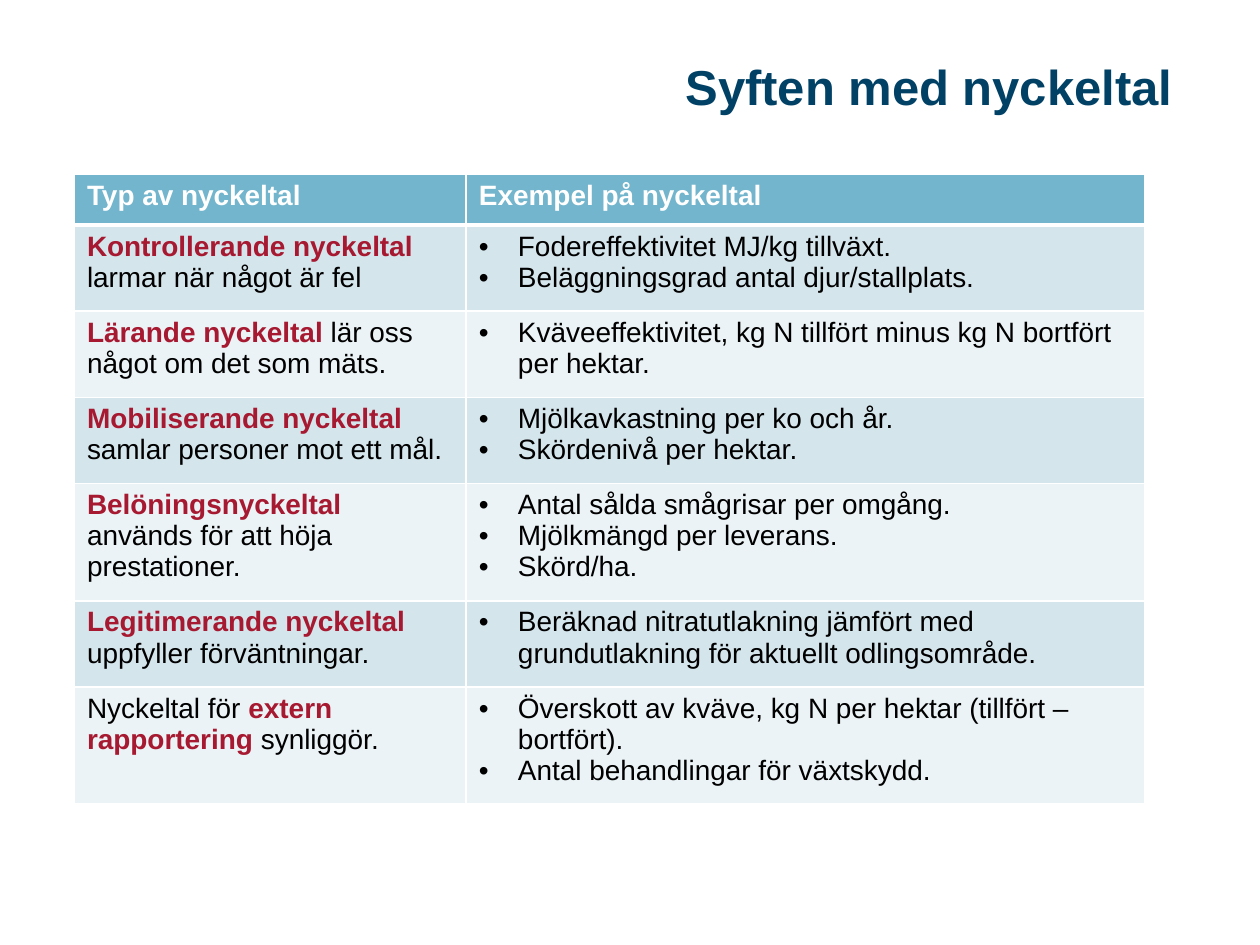
from lxml import etree
from pptx import Presentation
from pptx.dml.color import RGBColor
from pptx.enum.text import MSO_ANCHOR, PP_ALIGN
from pptx.oxml.ns import qn
from pptx.util import Pt

RIGHT = PP_ALIGN.RIGHT
MIDDLE = MSO_ANCHOR.MIDDLE
TITLE_ONLY = 5
EMU_PER_PX = 914400 // 126

COLORS = {
    "title": "004165",
    "header": "72B5CC",
    "odd_row": "D5E5EC",
    "even_row": "EBF3F6",
    "key": "A71930",
    "body": "000000",
    "white": "FFFFFF",
}

HEADINGS = ["Typ av nyckeltal", "Exempel på nyckeltal"]

# Each purpose: runs of (text, colour of the run), then its examples
PURPOSES = [
    ([("Kontrollerande nyckeltal ", "key"), ("larmar när något är fel", "body")],
     ["Fodereffektivitet MJ/kg tillväxt.",
      "Beläggningsgrad antal djur/stallplats."]),
    ([("Lärande nyckeltal ", "key"), ("lär oss något om det som mäts.", "body")],
     ["Kväveeffektivitet, kg N tillfört minus kg N bortfört per hektar."]),
    ([("Mobiliserande nyckeltal ", "key"), ("samlar personer mot ett mål.", "body")],
     ["Mjölkavkastning per ko och år.",
      "Skördenivå per hektar."]),
    ([("Belöningsnyckeltal", "key"), (" används för att höja prestationer.", "body")],
     ["Antal sålda smågrisar per omgång.",
      "Mjölkmängd per leverans.",
      "Skörd/ha."]),
    ([("Legitimerande nyckeltal ", "key"), ("uppfyller förväntningar.", "body")],
     ["Beräknad nitratutlakning jämfört med grundutlakning för aktuellt odlingsområde."]),
    ([("Nyckeltal för ", "body"), ("extern rapportering ", "key"), ("synliggör.", "body")],
     ["Överskott av kväve, kg N per hektar (tillfört – bortfört).",
      "Antal behandlingar för växtskydd."]),
]


def px(length):
    return length * EMU_PER_PX


class SlideBuilder:
    FONT = "Arial"
    TITLE_SIZE = 28
    TABLE_SIZE = 16
    BULLET_INDENT = 39

    def __init__(self, slide):
        self.slide = slide

    def run(self, paragraph, text, size, color, bold=False):
        run = paragraph.add_run()
        run.text = text
        run.font.name = self.FONT
        run.font.size = Pt(size)
        run.font.bold = bold
        run.font.color.rgb = RGBColor.from_string(COLORS[color])

    def title(self, text, left, top, width, height):
        title = self.slide.shapes.title
        title.left, title.top = px(left), px(top)
        title.width, title.height = px(width), px(height)
        title.text_frame.vertical_anchor = MIDDLE
        paragraph = title.text_frame.paragraphs[0]
        paragraph.alignment = RIGHT
        self.run(paragraph, text, self.TITLE_SIZE, "title", bold=True)

    def table(self, left, top, column_widths, row_count, row_height):
        """Add a table whose rows grow from row_height to fit their text."""
        frame = self.slide.shapes.add_table(
            row_count, len(column_widths), px(left), px(top),
            px(sum(column_widths)), px(row_count * row_height))
        for column, width in zip(frame.table.columns, column_widths):
            column.width = px(width)
        return frame.table

    def cell(self, cell, paragraphs, fill, top_line=1, bottom_line=1,
             bottom_margin=6, bulleted=False):
        """Fill a cell with paragraphs, each a list of (text, colour) runs."""
        self.borders(cell, {"L": 1, "R": 1, "T": top_line, "B": bottom_line})
        cell.fill.solid()
        cell.fill.fore_color.rgb = RGBColor.from_string(COLORS[fill])
        cell.margin_left = cell.margin_right = px(13)
        cell.margin_top, cell.margin_bottom = px(6), px(bottom_margin)
        frame = cell.text_frame
        for index, runs in enumerate(paragraphs):
            paragraph = frame.add_paragraph() if index else frame.paragraphs[0]
            if bulleted:
                self.bullet(paragraph)
            for text, color in runs:
                self.run(paragraph, text, self.TABLE_SIZE, color, color != "body")

    def borders(self, cell, widths):
        properties = cell._tc.get_or_add_tcPr()
        for side, width in widths.items():
            line = etree.SubElement(properties, qn(f"a:ln{side}"), w=str(Pt(width)))
            fill = etree.SubElement(line, qn("a:solidFill"))
            etree.SubElement(fill, qn("a:srgbClr"), val=COLORS["white"])

    def bullet(self, paragraph):
        properties = paragraph._p.get_or_add_pPr()
        properties.set("marL", str(px(self.BULLET_INDENT)))
        properties.set("indent", str(-px(self.BULLET_INDENT)))
        etree.SubElement(properties, qn("a:buFont"), typeface=self.FONT)
        etree.SubElement(properties, qn("a:buChar"), char="•")


def main():
    presentation = Presentation()
    presentation.slide_width, presentation.slide_height = px(1260), px(945)
    layout = presentation.slide_layouts[TITLE_ONLY]
    builder = SlideBuilder(presentation.slides.add_slide(layout))

    builder.title("Syften med nyckeltal", 268, 49, 917, 74)
    purposes_table = builder.table(74, 174, [392, 679], len(PURPOSES) + 1, 51)
    for column, heading in enumerate(HEADINGS):
        builder.cell(purposes_table.cell(0, column), [[(heading, "white")]],
                     "header", bottom_line=3)
    for row, (purpose, examples) in enumerate(PURPOSES, start=1):
        style = {
            "fill": "odd_row" if row % 2 else "even_row",
            "top_line": 3 if row == 1 else 1,
            "bottom_margin": 18,
        }
        builder.cell(purposes_table.cell(row, 0), [purpose], **style)
        builder.cell(purposes_table.cell(row, 1),
                     [[(example, "body")] for example in examples],
                     bulleted=True, **style)

    presentation.save("out.pptx")


if __name__ == "__main__":
    main()
